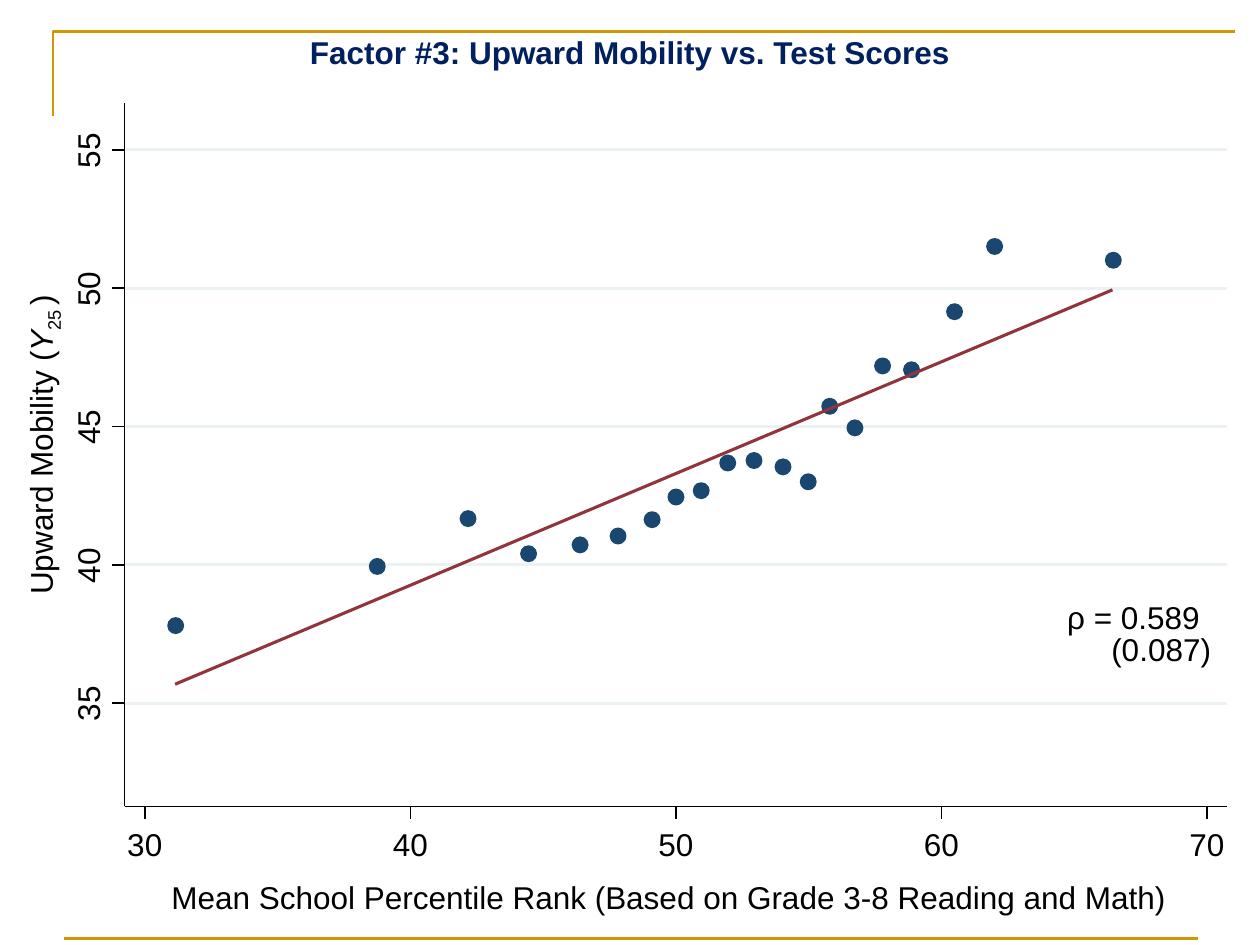
import pptx
import pptx.util
import pptx.dml.color
import pptx.enum.shapes
import pptx.enum.text
from lxml import etree

Inches, Pt = pptx.util.Inches, pptx.util.Pt
RGBColor = pptx.dml.color.RGBColor
A_NS = "http://schemas.openxmlformats.org/drawingml/2006/main"

GOLD = RGBColor(0xCC, 0x99, 0x00)
GRID = RGBColor(0xEA, 0xF2, 0xF3)
NAVY = RGBColor(0x1A, 0x47, 0x6F)
MAROON = RGBColor(0x90, 0x35, 0x3B)
BLACK = RGBColor(0, 0, 0)
TITLE_BLUE = RGBColor(0x00, 0x20, 0x60)

# Plot area and scales, in inches
LEFT, RIGHT, TOP, BOTTOM = 0.99, 9.74, 0.82, 6.4
TICK, DOT = 0.1, 0.11
X_TICKS = range(30, 71, 10)
Y_TICKS = range(35, 56, 5)

# Mean school percentile rank, upward mobility
POINTS = [
    (31.16, 37.8), (38.75, 39.94), (42.17, 41.67), (44.45, 40.4),
    (46.39, 40.72), (47.82, 41.04), (49.1, 41.63), (50, 42.45),
    (50.95, 42.68), (51.95, 43.68), (52.94, 43.77), (54.03, 43.54),
    (54.98, 43), (55.79, 45.73), (56.74, 44.95), (57.78, 47.19),
    (58.87, 47.05), (60.49, 49.15), (62, 51.51), (66.47, 51.01),
]
FIT = [(31.14, 35.68), (66.44, 49.94)]


def x_pos(value):
    return 1.15 + (value - 30) * (9.58 - 1.15) / 40


def y_pos(value):
    return 5.58 - (value - 35) * (5.58 - 1.19) / 20


def add_run(p, text, color=BLACK, size=18, bold=False, italic=False, baseline=None):
    r = p.add_run()
    r.text = text
    r.font.name = "Arial"
    r.font.size = Pt(size)
    r.font.bold = bold
    r.font.italic = italic
    r.font.color.rgb = color
    if baseline is not None:
        r.font._element.set("baseline", str(baseline * 1000))


class Builder:
    def __init__(self, slide):
        self.s = slide

    def line(self, x1, y1, x2, y2, color, width):
        sp = self.s.shapes.add_connector(
            pptx.enum.shapes.MSO_CONNECTOR.STRAIGHT,
            Inches(x1), Inches(y1), Inches(x2), Inches(y2))
        sp.line.color.rgb = color
        sp.line.width = Pt(width)
        etree.SubElement(sp._element.spPr, f"{{{A_NS}}}effectLst")

    def path_line(self, points, color, width):
        points = [(Inches(x), Inches(y)) for x, y in points]
        fb = self.s.shapes.build_freeform(*points[0])
        fb.add_line_segments(points[1:], close=False)
        sp = fb.convert_to_shape()
        sp.shadow.inherit = False
        sp.fill.background()
        sp.line.color.rgb = color
        sp.line.width = Pt(width)

    def dot(self, x, y):
        sp = self.s.shapes.add_shape(
            pptx.enum.shapes.MSO_SHAPE.OVAL, Inches(x - DOT / 2),
            Inches(y - DOT / 2), Inches(DOT), Inches(DOT))
        sp.shadow.inherit = False
        sp.fill.solid()
        sp.fill.fore_color.rgb = NAVY
        sp.line.color.rgb = NAVY
        sp.line.width = Pt(1.75)

    def text(self, x, y, w, h, runs, rotation=0, centered=False):
        """Place runs, each a (text, format) pair; only centred text wraps."""
        sp = self.s.shapes.add_textbox(Inches(x), Inches(y), Inches(w), Inches(h))
        sp.rotation = rotation
        tf = sp.text_frame
        tf.margin_left = tf.margin_right = tf.margin_top = tf.margin_bottom = 0
        tf.word_wrap = centered
        tf.auto_size = pptx.enum.text.MSO_AUTO_SIZE.SHAPE_TO_FIT_TEXT
        p = tf.paragraphs[0]
        if centered:
            p.alignment = pptx.enum.text.PP_ALIGN.CENTER
        for text, style in runs:
            add_run(p, text, **style)


def main():
    prs = pptx.Presentation()
    prs.slide_width, prs.slide_height = Inches(10), Inches(7.5)
    b = Builder(prs.slides.add_slide(prs.slide_layouts[6]))

    # Frame
    b.path_line([(0.42, 0.92), (0.42, 0.25), (9.8, 0.25)], GOLD, 1.5)
    b.line(0.51, 7.45, 9.51, 7.45, GOLD, 1.5)

    # Gridlines, points and fitted line
    for value in Y_TICKS:
        b.line(LEFT, y_pos(value), RIGHT, y_pos(value), GRID, 1.75)
    for x, y in POINTS:
        b.dot(x_pos(x), y_pos(y))
    b.path_line([(x_pos(x), y_pos(y)) for x, y in FIT], MAROON, 1.75)

    # Vertical axis
    b.line(LEFT, BOTTOM, LEFT, TOP, BLACK, 0.88)
    for value in Y_TICKS:
        y = y_pos(value)
        b.line(LEFT, y, LEFT - TICK, y, BLACK, 0.88)
        b.text(0.52, y - 0.24, 0.41, 0.36, [(str(value), {})], rotation=270)

    # Horizontal axis
    b.line(LEFT, BOTTOM, RIGHT, BOTTOM, BLACK, 0.88)
    for value in X_TICKS:
        x = x_pos(value)
        b.line(x, BOTTOM, x, BOTTOM + TICK, BLACK, 0.88)
        b.text(x - 0.14, 6.55, 0.41, 0.36, [(str(value), {})])

    # Axis titles
    b.text(-0.91, 3.34, 2.46, 0.3,
           [("Upward Mobility (", {}), ("Y", {"italic": True}),
            ("25 ", {"baseline": -25}), (")", {"baseline": 0})], rotation=270)
    b.text(1.36, 6.97, 8.45, 0.36,
           [("Mean School Percentile Rank (Based on Grade 3-8 Reading and Math)", {})])

    # Correlation and slide title
    b.text(8.82, 5, 0.8, 0.3, [("(0.087)", {})])
    b.text(8.47, 4.75, 1.06, 0.3, [("ρ = 0.589", {})])
    b.text(0, 0.26, 10, 0.34,
           [("Factor #3: Upward Mobility vs. Test Scores",
             {"color": TITLE_BLUE, "bold": True})], centered=True)

    prs.save("out.pptx")


if __name__ == "__main__":
    main()
